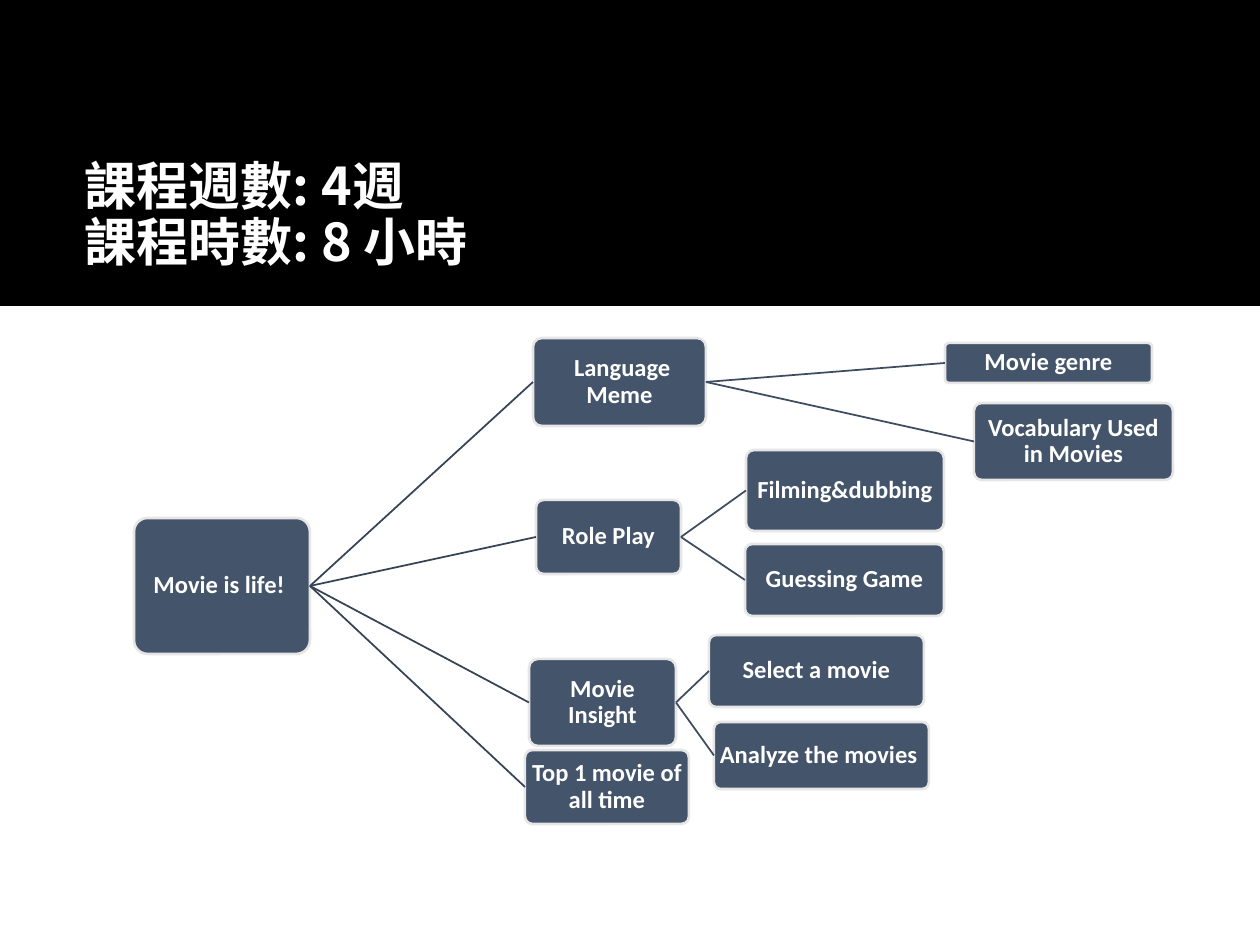
from lxml.etree import SubElement
from pptx import Presentation
from pptx.dml.color import RGBColor
from pptx.enum.shapes import MSO_CONNECTOR, MSO_SHAPE
from pptx.enum.text import MSO_ANCHOR, PP_ALIGN
from pptx.oxml.ns import qn
from pptx.util import Emu, Pt

PX = 914400 // 126
HEX = {
    "black": "000000",
    "white": "FFFFFF",
    "slate": "44546A",
    "edge": "E7E6E6",
    "trunk": "364355",
    "twig": "3E4C60",
}
RGB = {name: RGBColor.from_string(code) for name, code in HEX.items()}

deck = Presentation()
deck.slide_width, deck.slide_height = Emu(1260 * PX), Emu(945 * PX)
slide = deck.slides.add_slide(deck.slide_layouts[6])
shapes = slide.shapes


def add_box(text, *rect):
    box = shapes.add_shape(MSO_SHAPE.ROUNDED_RECTANGLE, *[Emu(n * PX) for n in rect])
    box.adjustments[0] = 0.1
    box.shadow.inherit = False
    box.fill.solid()
    box.fill.fore_color.rgb = RGB["slate"]
    box.line.color.rgb = RGB["edge"]
    box.line.width = Pt(1.5)
    frame = box.text_frame
    frame.word_wrap = True
    frame.vertical_anchor = MSO_ANCHOR.MIDDLE
    frame.margin_left = frame.margin_right = Emu(3 * PX)
    frame.margin_top = frame.margin_bottom = Emu(3 * PX)
    para = frame.paragraphs[0]
    para.text = text
    para.alignment = PP_ALIGN.CENTER
    para.line_spacing = 0.9
    para.font.name = "Calibri"
    para.font.size = Pt(14)
    para.font.bold = True
    para.font.color.rgb = RGB["white"]
    return box


def join(start, end, color):
    line = shapes.add_connector(MSO_CONNECTOR.STRAIGHT, 0, 0, 0, 0)
    line.begin_connect(start, 3)
    line.end_connect(end, 1)
    line.line.color.rgb = RGB[color]
    line.line.width = Pt(1)
    SubElement(line._element.spPr, qn("a:effectLst"))


band = shapes.add_shape(MSO_SHAPE.RECTANGLE, *[Emu(n * PX) for n in (-29, -14, 1337, 320)])
band.shadow.inherit = False
band.fill.solid()
band.fill.fore_color.rgb = RGB["black"]
band.line.fill.background()

title = shapes.add_textbox(*[Emu(n * PX) for n in (72, 148, 1086, 137)])
frame = title.text_frame
frame.word_wrap = True
frame.vertical_anchor = MSO_ANCHOR.MIDDLE
para = frame.paragraphs[0]
para.text = "課程週數: 4週\v課程時數: 8 小時"
para.line_spacing = 0.9
para.font.name = "Noto Sans CJK TC"
para.font.size = Pt(29.7)
para.font.bold = True
para.font.color.rgb = RGB["white"]
SubElement(para.font._element, qn("a:ea"), typeface="Noto Sans CJK TC")

tree = [
    ((" Language Meme", 533, 338, 173, 88), [
        ("Movie genre", 945, 343, 207, 40),
        ("Vocabulary Used in Movies", 974, 403, 199, 77),
    ]),
    (("Role Play", 536, 500, 145, 74), [
        ("Guessing Game", 745, 544, 199, 72),
        ("Filming&dubbing", 746, 450, 198, 81),
    ]),
    (("Movie Insight", 529, 659, 147, 87), [
        ("Select a movie", 709, 635, 215, 72),
        ("Analyze the movies ", 714, 722, 215, 67),
    ]),
    (("Top 1 movie of all time", 525, 750, 164, 74), []),
]

root = add_box("Movie is life! ", 134, 518, 176, 136)
for topic, leaves in tree:
    branch = add_box(*topic)
    join(root, branch, "trunk")
    for leaf in leaves:
        join(branch, add_box(*leaf), "twig")

deck.save("out.pptx")
